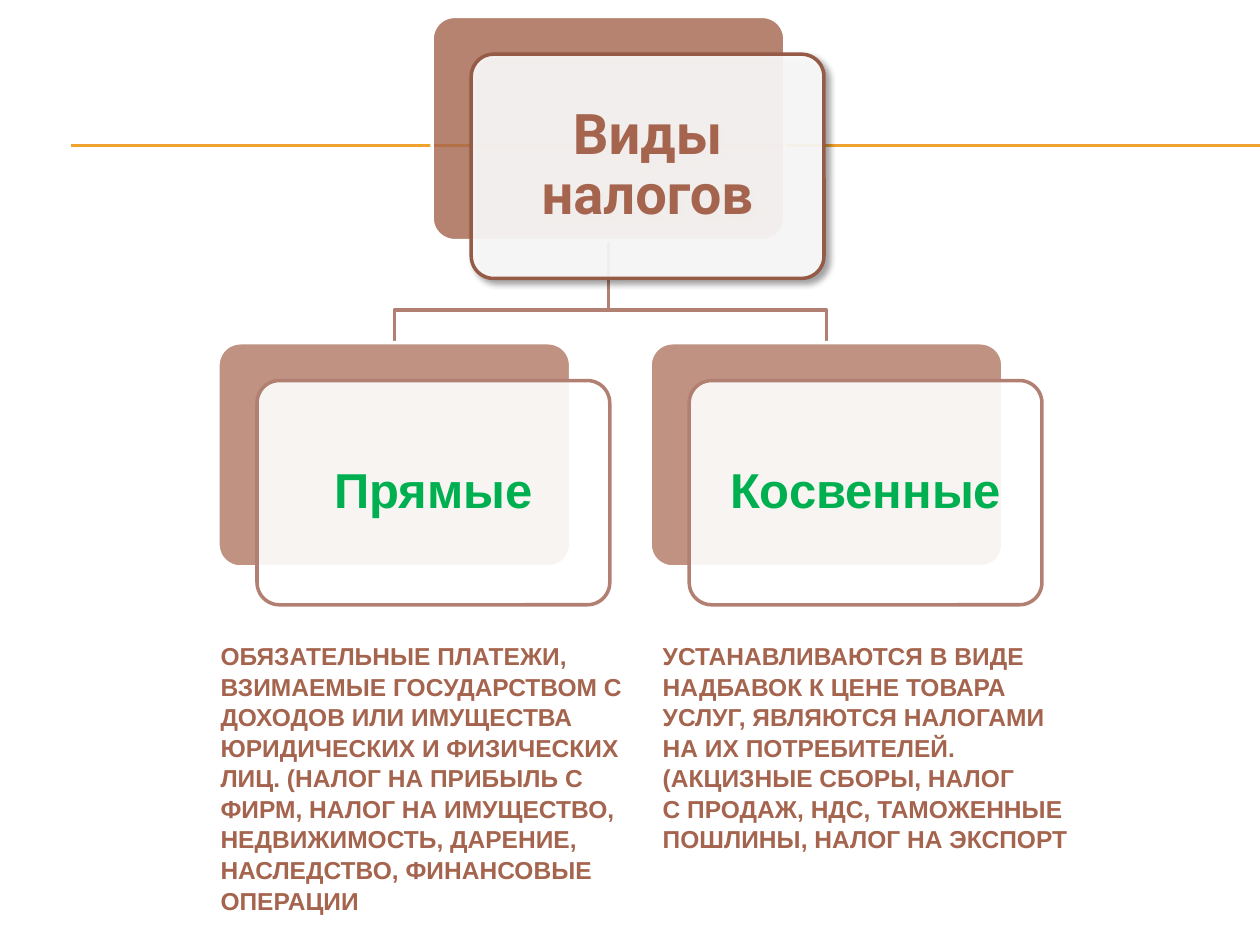
"""Builds a slide showing the two kinds of taxes as a small hierarchy."""
from dataclasses import dataclass

from lxml.etree import SubElement
from pptx import Presentation
from pptx.dml.color import RGBColor
from pptx.enum.shapes import MSO_CONNECTOR, MSO_SHAPE
from pptx.enum.text import MSO_ANCHOR, PP_ALIGN
from pptx.oxml.ns import qn
from pptx.util import Inches, Pt

COLORS = {
    "rule": "F0A22E",
    "brown": "A5644E",
    "dark_brown": "965B47",
    "rose": "B18073",
    "green": "00B050",
    "white": "FFFFFF",
    "black": "000000",
}
CARD_WIDTH, CARD_HEIGHT = 2.8, 1.78
SHIFT_X, SHIFT_Y = 0.31, 0.3
FORK_Y = 2.46
DEFINITIONS = [
    ("ОБЯЗАТЕЛЬНЫЕ ПЛАТЕЖИ,", "УСТАНАВЛИВАЮТСЯ В ВИДЕ"),
    ("ВЗИМАЕМЫЕ ГОСУДАРСТВОМ С", "НАДБАВОК К ЦЕНЕ ТОВАРА"),
    ("ДОХОДОВ ИЛИ ИМУЩЕСТВА", "УСЛУГ, ЯВЛЯЮТСЯ НАЛОГАМИ"),
    ("ЮРИДИЧЕСКИХ И ФИЗИЧЕСКИХ", "НА ИХ ПОТРЕБИТЕЛЕЙ."),
    ("ЛИЦ. (НАЛОГ НА ПРИБЫЛЬ С", "(АКЦИЗНЫЕ СБОРЫ, НАЛОГ"),
    ("ФИРМ, НАЛОГ НА ИМУЩЕСТВО,", "С ПРОДАЖ, НДС, ТАМОЖЕННЫЕ"),
    ("НЕДВИЖИМОСТЬ, ДАРЕНИЕ,", "ПОШЛИНЫ, НАЛОГ НА ЭКСПОРТ"),
    ("НАСЛЕДСТВО, ФИНАНСОВЫЕ",),
    ("ОПЕРАЦИИ",),
]


@dataclass
class Card:
    label: str
    left: float
    top: float
    font: str = "Arial"
    size: int = 28
    color: str = "green"
    outline: str = "rose"
    back_opacity: int = 70
    inset: float = 0.12
    raised: bool = False

    @property
    def center(self) -> float:
        return self.left + CARD_WIDTH / 2


ROOT = Card("Виды налогов", 3.43, 0.13, "Roboto", 32, "brown", "dark_brown", 80, 0.13, True)
BRANCHES = [Card("Прямые", 1.73, 2.72), Card("Косвенные", 5.16, 2.72)]


def rgb(name: str) -> RGBColor:
    return RGBColor.from_string(COLORS[name])


def apply_format(target, values: dict) -> None:
    for attribute, value in values.items():
        setattr(target, attribute, value)


def format_font(font, name: str, size: int, color: str) -> None:
    apply_format(font, {"name": name, "size": Pt(size), "bold": True})
    font.color.rgb = rgb(color)


def format_line(line, color: str, width: float) -> None:
    line.color.rgb = rgb(color)
    line.width = Pt(width)


def set_opacity(color_element, percent: int) -> None:
    SubElement(color_element, qn("a:alpha")).set("val", str(percent * 1000))


def add_rule(slide, y: float) -> None:
    rule = slide.shapes.add_connector(
        MSO_CONNECTOR.STRAIGHT, Inches(0.56), Inches(y), Inches(10), Inches(y))
    format_line(rule.line, "rule", 0.75)
    SubElement(rule._element.spPr, qn("a:effectLst"))


def add_branch_line(slide, parent: Card, child: Card) -> None:
    corners = [(parent.center, FORK_Y), (child.center, FORK_Y), (child.center, child.top)]
    builder = slide.shapes.build_freeform(
        Inches(parent.center), Inches(parent.top + CARD_HEIGHT))
    builder.add_line_segments([(Inches(x), Inches(y)) for x, y in corners], close=False)
    branch = builder.convert_to_shape()
    branch.shadow.inherit = False
    branch.fill.background()
    format_line(branch.line, "rose", 2)


def add_panel(slide, left: float, top: float, fill: str, opacity: int, outline: str):
    panel = slide.shapes.add_shape(
        MSO_SHAPE.ROUNDED_RECTANGLE,
        Inches(left), Inches(top), Inches(CARD_WIDTH), Inches(CARD_HEIGHT))
    panel.adjustments[0] = 0.1
    panel.shadow.inherit = False
    panel.fill.solid()
    panel.fill.fore_color.rgb = rgb(fill)
    set_opacity(panel._element.spPr.find(qn("a:solidFill"))[0], opacity)
    format_line(panel.line, outline, 2)
    return panel


def add_drop_shadow(panel) -> None:
    effects = panel._element.spPr.find(qn("a:effectLst"))
    shadow = SubElement(effects, qn("a:outerShdw"))
    for key, value in {"blurRad": Pt(4), "dist": Pt(3), "dir": 45 * 60000}.items():
        shadow.set(key, str(int(value)))
    shade = SubElement(shadow, qn("a:srgbClr"))
    shade.set("val", COLORS["black"])
    set_opacity(shade, 40)


def add_card(slide, card: Card) -> None:
    add_panel(slide, card.left, card.top, "brown", card.back_opacity, "white")
    front = add_panel(
        slide, card.left + SHIFT_X, card.top + SHIFT_Y, "white", 90, card.outline)
    if card.raised:
        add_drop_shadow(front)
    frame = front.text_frame
    sides = ("left", "top", "right", "bottom")
    apply_format(frame, {f"margin_{side}": Inches(card.inset) for side in sides})
    apply_format(frame, {"word_wrap": True, "vertical_anchor": MSO_ANCHOR.MIDDLE})
    paragraph = frame.paragraphs[0]
    apply_format(paragraph, {"text": card.label, "alignment": PP_ALIGN.CENTER,
                             "line_spacing": 0.9})
    format_font(paragraph.runs[0].font, card.font, card.size, card.color)


def fill_definitions(title) -> None:
    apply_format(title, {"left": Inches(1.65), "top": Inches(4.65),
                         "width": Inches(8.46), "height": Inches(3.04)})
    apply_format(title.text_frame, {"word_wrap": True, "vertical_anchor": MSO_ANCHOR.MIDDLE})
    paragraph = title.text_frame.paragraphs[0]
    apply_format(paragraph, {"text": "\v".join("\t".join(row) for row in DEFINITIONS),
                             "alignment": PP_ALIGN.LEFT, "line_spacing": 1.04})
    format_font(paragraph.font, "Arial", 14, "brown")
    for run in paragraph.runs:
        format_font(run.font, "Arial", 14, "brown")
    properties = paragraph._p.get_or_add_pPr()
    stops = SubElement(properties, qn("a:tabLst"))
    properties.find(qn("a:defRPr")).addprevious(stops)
    column = SubElement(stops, qn("a:tab"))
    column.set("pos", str(Inches(3.51)))
    column.set("algn", "l")


def main() -> None:
    presentation = Presentation()
    apply_format(presentation, {"slide_width": Inches(10), "slide_height": Inches(7.5)})
    slide = presentation.slides.add_slide(presentation.slide_layouts[5])
    for y in (1.15, 1.16):
        add_rule(slide, y)
    fill_definitions(slide.shapes.title)
    for branch in reversed(BRANCHES):
        add_branch_line(slide, ROOT, branch)
    for card in [ROOT, *BRANCHES]:
        add_card(slide, card)
    presentation.save("out.pptx")


if __name__ == "__main__":
    main()
